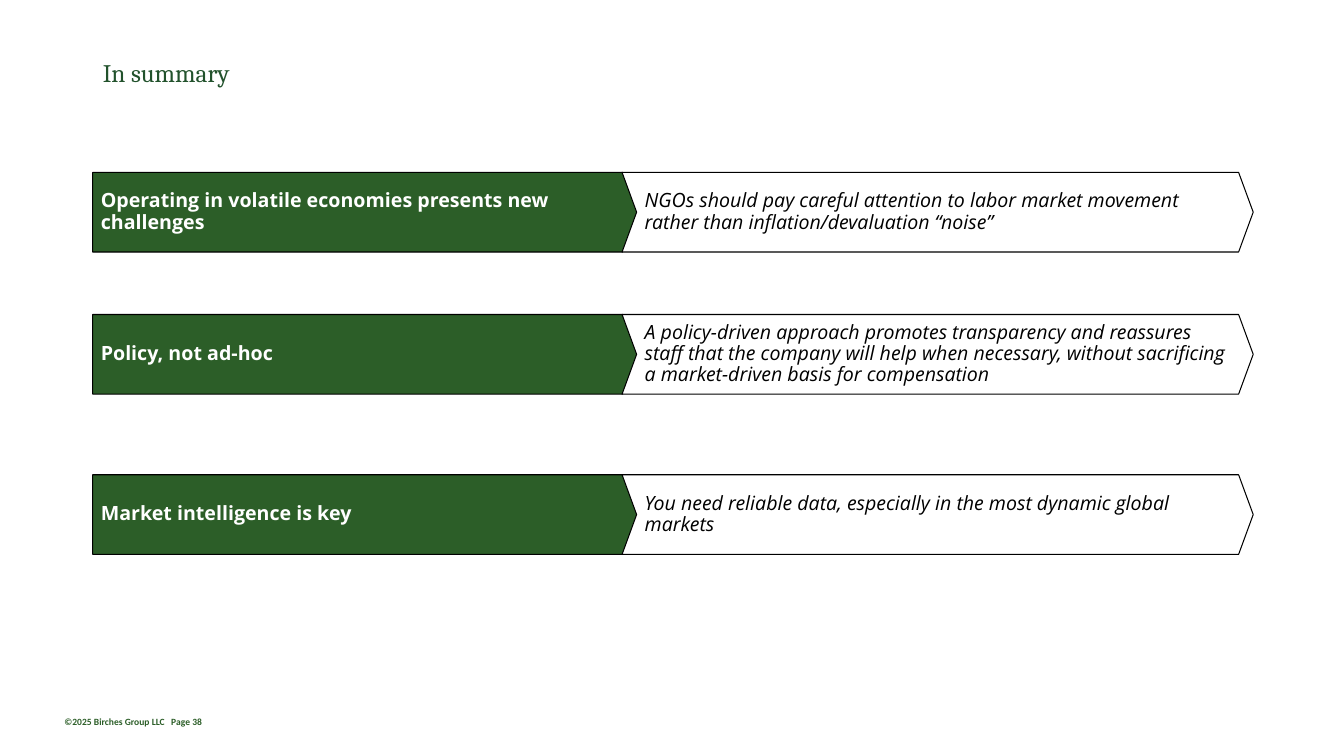
"""Build the summary slide: three statements, each with its explanation."""
from pptx import Presentation
from pptx.dml.color import RGBColor
from pptx.enum.shapes import MSO_SHAPE as Shape
from pptx.enum.text import MSO_ANCHOR as Anchor, MSO_AUTO_SIZE as AutoSize, PP_ALIGN as Align
from pptx.oxml.ns import qn
from pptx.util import Inches, Pt

GREEN, WHITE, BLACK = "2C5E28", "FFFFFF", "000000"


def color(value):
    return RGBColor.from_string(value)


def write(box, text, ink, font, frame, spacing=0.9):
    box.text_frame.text = text
    for name, value in frame.items():
        setattr(box.text_frame, name, value)
    para = box.text_frame.paragraphs[0]
    para.alignment = Align.LEFT
    para.line_spacing = spacing
    span = para.runs[0]
    for run in para.runs:
        for name, value in font.items():
            setattr(run.font, name, value)
        run.font.color.rgb = color(ink)
    return para


deck = Presentation()
deck.slide_width, deck.slide_height = Inches(13.33), Inches(7.5)
page = deck.slides.add_slide(deck.slide_layouts[5])

title = page.shapes.title
title.left, title.top = Inches(0.92), Inches(0.4)
title.width, title.height = Inches(11.5), Inches(0.67)
write(title, "In summary", "22522C", {"name": "Cambria", "size": Pt(18)},
      {"vertical_anchor": Anchor.MIDDLE, "auto_size": AutoSize.NONE, "word_wrap": True})

rows = [
    (1.71, "Operating in volatile economies presents new challenges",
     "NGOs should pay careful attention to labor market movement "
     "rather than inflation/devaluation “noise”", 0.03),
    (3.12, "Policy, not ad-hoc",
     "A policy-driven approach promotes transparency and reassures staff that the company "
     "will help when necessary, without sacrificing a market-driven basis for compensation", 0.05),
    (4.71, "Market intelligence is key",
     "You need reliable data, especially in the most dynamic global markets", 0),
]
for top, statement, explanation, right_margin in rows:
    arrows = [
        (Shape.PENTAGON, 0.92, 5.4, GREEN, WHITE, statement, {"bold": True}, 0),
        (Shape.CHEVRON, 6.17, 6.26, WHITE, BLACK, explanation, {"italic": True}, right_margin),
    ]
    for kind, left, width, fill, ink, text, style, margin in arrows:
        arrow = page.shapes.add_shape(kind, Inches(left), Inches(top), Inches(width), Inches(0.79))
        arrow.adjustments[0] = 0.183
        arrow.shadow.inherit = False
        arrow.fill.solid()
        arrow.fill.fore_color.rgb = color(fill)
        arrow.line.color.rgb = color(BLACK)
        arrow.line.width = Pt(0.75)
        write(arrow, text, ink, {"name": "Open Sans", "size": Pt(14), **style},
              {"vertical_anchor": Anchor.MIDDLE, "word_wrap": True,
               "margin_left": Inches(0.08), "margin_right": Inches(margin),
               "margin_top": Inches(0.08), "margin_bottom": Inches(0.08)})

footer = page.shapes.add_textbox(Inches(0.54), Inches(7.05), Inches(3.02), Inches(0.21))
para = write(footer, "©2025 Birches Group LLC\tPage 38", GREEN,
             {"name": "Calibri", "size": Pt(6.8), "bold": True},
             {"word_wrap": True, "auto_size": AutoSize.SHAPE_TO_FIT_TEXT}, 1.0)
tabs = para._p.get_or_add_pPr().makeelement(qn("a:tabLst"), {})
tabs.append(tabs.makeelement(qn("a:tab"), {"pos": str(Inches(1.06)), "algn": "l"}))
para._p.get_or_add_pPr().append(tabs)

deck.save("out.pptx")
